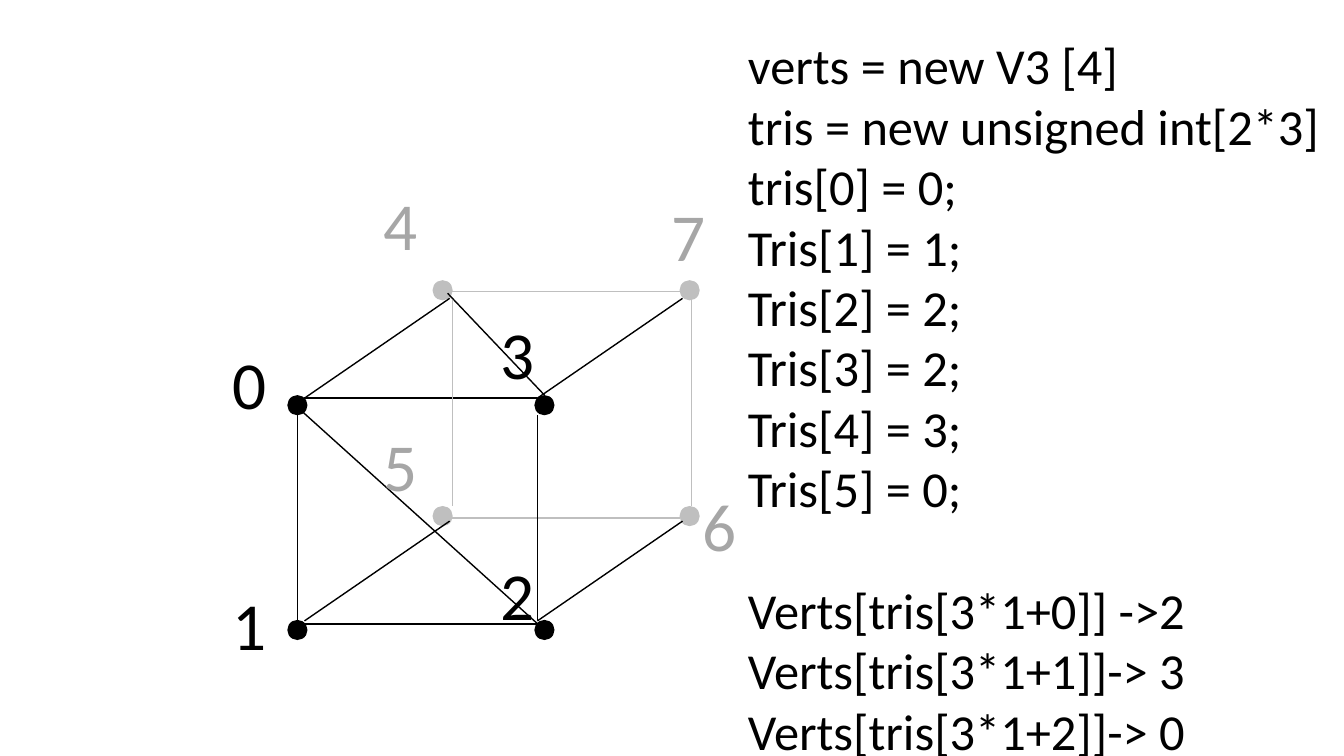
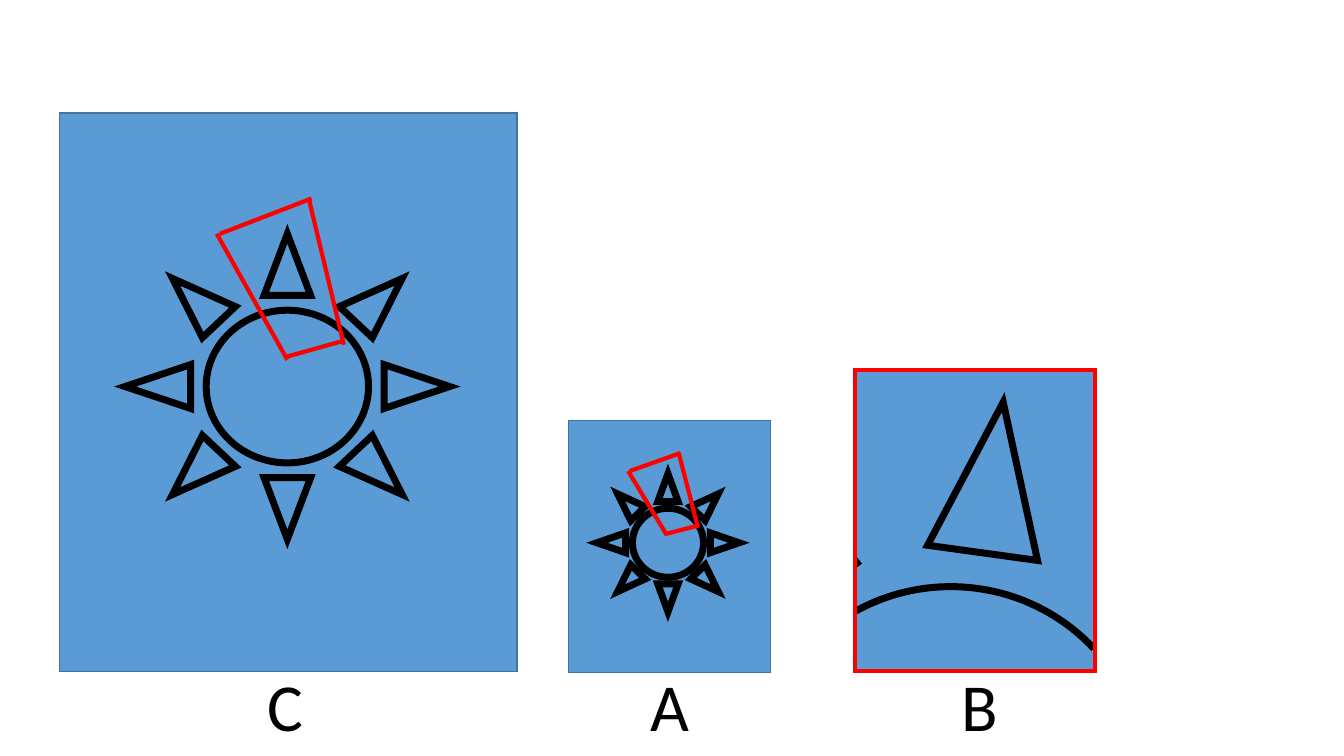
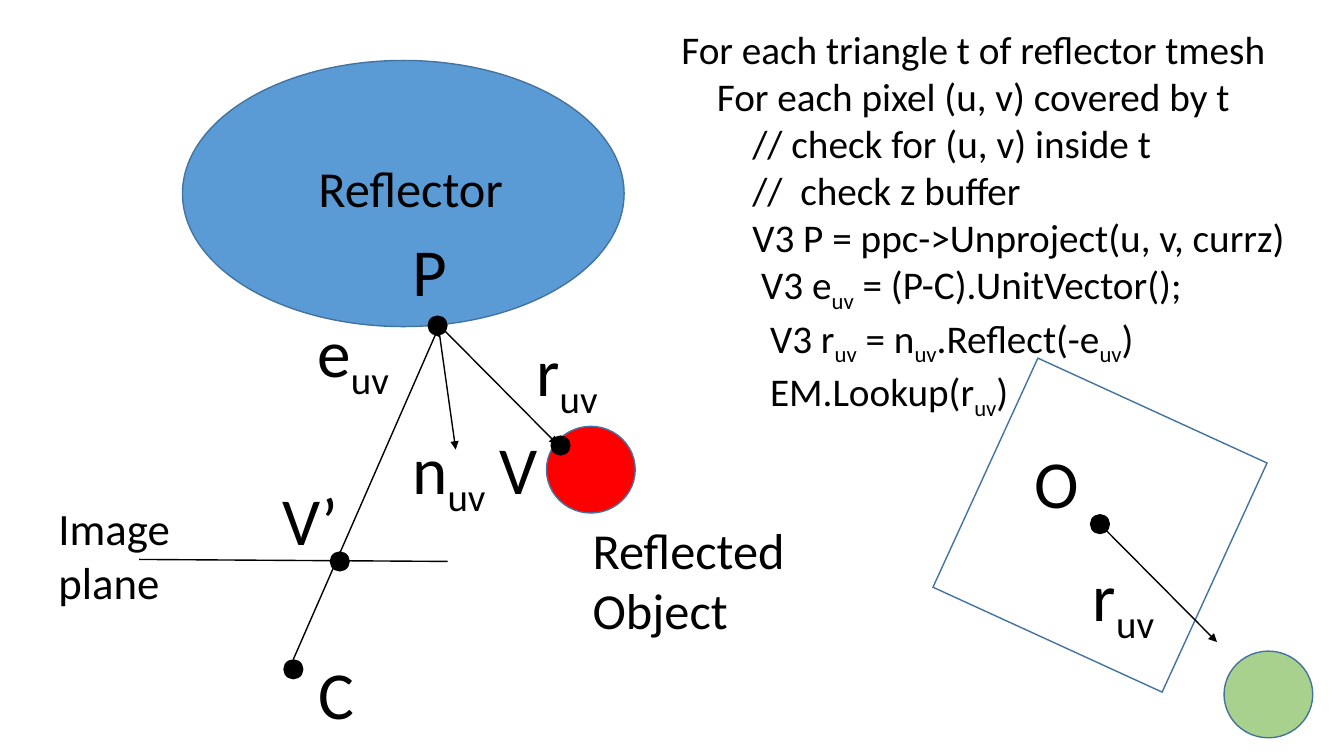
import math

from lxml import etree
from pptx import Presentation
from pptx.dml.color import RGBColor
from pptx.enum.shapes import MSO_CONNECTOR, MSO_SHAPE
from pptx.enum.text import MSO_AUTO_SIZE
from pptx.oxml.ns import qn
from pptx.util import Inches, Pt

RECT, OVAL, SUN = MSO_SHAPE.RECTANGLE, MSO_SHAPE.OVAL, MSO_SHAPE.SUN
STRAIGHT = MSO_CONNECTOR.STRAIGHT
GROW = MSO_AUTO_SIZE.SHAPE_TO_FIT_TEXT

BLACK = RGBColor(0x00, 0x00, 0x00)
BLUE = RGBColor(0x5B, 0x9B, 0xD5)
EDGE = RGBColor(0x43, 0x73, 0x9E)
RED = RGBColor(0xFF, 0x00, 0x00)
GREEN = RGBColor(0xA9, 0xD1, 0x8E)
GREY = RGBColor(0xBF, 0xBF, 0xBF)
LABEL_GREY = RGBColor(0xA6, 0xA6, 0xA6)

FONT = "Calibri"
SUBSCRIPT = "uv"
LABEL_SIZE = 48
DOT = 0.2
THIN, MARK, BOLD = 1, 3, 5
SPACE = 0.088  # width of one code indent step

# Slide 1: cube with numbered vertices
DOTS = [
    ((2.85, 5.3), (3.92, 6.15), BLACK),
    ((4.29, 6.74), (2.78, 5.02), GREY),
]
CUBE_EDGES = [
    ((5.33, 3.95), (3.02, 3.95), BLACK),
    ((5.33, 6.19), (3.02, 6.19), BLACK),
    ((6.74, 2.89), (4.43, 2.89), GREY),
    ((6.74, 5.14), (4.43, 5.14), GREY),
    ((2.95, 6.15), (2.95, 4.12), BLACK),
    ((5.33, 6.15), (5.33, 4.12), BLACK),
    ((6.86, 5.02), (6.86, 2.98), GREY),
    ((4.49, 5.02), (4.49, 2.98), GREY),
    ((5.4, 6.25), (2.95, 4.04), BLACK),
    ((5.4, 3.92), (4.44, 2.91), BLACK),
]
DEPTH_STARTS = [(x, y) for x in (4.46, 6.77) for y in (2.96, 5.17)]
DEPTH = (-1.44, 0.99)
CUBE_LABELS = [
    ("0", 2.21, 3.35, BLACK), ("1", 2.21, 5.74, BLACK),
    ("2", 4.87, 5.44, BLACK), ("3", 4.87, 3.05, BLACK),
    ("4", 3.71, 1.77, LABEL_GREY), ("5", 3.71, 4.16, LABEL_GREY),
    ("6", 6.87, 4.76, LABEL_GREY), ("7", 6.56, 1.88, LABEL_GREY),
]
MESH_CODE = [
    "verts = new V3 [4]",
    "tris = new unsigned int[2*3]",
    "tris[0] = 0;",
    "Tris[1] = 1;",
    "Tris[2] = 2;",
    "Tris[3] = 2;",
    "Tris[4] = 3;",
    "Tris[5] = 0;",
    "Verts[tris[3*1+0]] ->2",
    "Verts[tris[3*1+1]]-> 3",
    "Verts[tris[3*1+2]]-> 0",
]
LOOKUP_START = 8

# Slide 2: image C, its small version A and the warped detail B
SUN_PANELS = [
    ((0.59, 1.12, 4.54, 5.54), (1.24, 2.32, 3.22, 3.03)),
    ((5.64, 4.17, 2, 2.5), (5.92, 4.7, 1.41, 1.37)),
]
QUAD_SIDES = [
    ((2.85, 3.57), (2.15, 2.32)),
    ((3.41, 3.42), (3.06, 1.96)),
    ((2.18, 2.32), (3.09, 1.97)),
    ((2.84, 3.54), (3.41, 3.38)),
]
QUAD_CORNER = (2.15, 1.96)
QUAD_PLACES = [(2.15, 1.96, 1, 1), (6.23, 4.49, 0.55, 0.51)]
DETAIL = (8.48, 3.67, 2.38, 2.99)
DETAIL_RAY = [(9.95, 3.99), (9.2, 5.41), (10.29, 5.56)]
DETAIL_TIP = [(8.5, 5.54), (8.54, 5.59), (8.5, 5.62)]
DISC_CENTRE, DISC_RADII = (9.43, 7.7), (1.92, 1.88)
ARC_STEPS = 40
PANEL_LABELS = [("C", 2.56, 0.56), ("A", 6.35, 0.59), ("B", 9.44, 0.57)]

# Slide 3: reflection lookup
SCENE = [
    (RECT, (9.66, 3.96, 2.5, 2.5), None, 24.6),
    (OVAL, (1.81, 0.6, 4.38, 2.64), BLUE, 0),
    (OVAL, (5.42, 4.23, 0.88, 0.86), RED, 0),
    (OVAL, (12.14, 6.46, 0.88, 0.86), GREEN, 0),
]
IMAGE_PLANE = ((1.38, 5.55), (4.44, 5.57))
RAYS = [
    ((2.91, 6.54), (4.35, 3.25)),
    ((4.35, 3.25), (4.52, 4.46)),
    ((4.37, 3.24), (5.53, 4.41)),
    ((10.91, 5.2), (12.07, 6.37)),
]
POINTS = [(2.81, 6.54), (10.81, 5.1), (5.46, 4.32), (3.27, 5.47), (4.24, 3.13)]
SCENE_LABELS = [
    (["C"], (3.06, 6.42, 0.56, 0.91), LABEL_SIZE),
    (["O"], (10.16, 4.33, 0.65, 0.91), LABEL_SIZE),
    (["V"], (4.86, 4.19, 0.58, 0.91), LABEL_SIZE),
    (["V’"], (2.7, 4.7, 0.77, 0.91), LABEL_SIZE),
    (["P"], (3.99, 2.23, 0.55, 0.91), LABEL_SIZE),
    (["euv"], (3.05, 3.03, 0.98, 0.91), LABEL_SIZE),
    (["ruv"], (5.22, 3.22, 0.88, 0.91), LABEL_SIZE),
    (["nuv"], (3.99, 4.19, 1, 0.91), LABEL_SIZE),
    (["ruv"], (10.74, 5.45, 0.88, 0.91), LABEL_SIZE),
    (["Image", "plane"], (0.48, 4.92, 1.32, 1.18), 32),
    (["Reflector"], (3.06, 1.51, 2.05, 0.71), 36),
    (["Reflected", "Object"], (5.78, 5.1, 2.13, 1.31), 36),
]
LOOKUP_CODE = [
    (0, "For each triangle t of reflector tmesh"),
    (4, "For each pixel (u, v) covered by t"),
    (8, "// check for (u, v) inside t"),
    (8, "//  check z buffer"),
    (8, "V3 P = ppc->Unproject(u, v, currz)"),
    (9, "V3 euv = (P-C).UnitVector();"),
    (10, "V3 ruv = nuv.Reflect(-euv)"),
    (10, "EM.Lookup(ruv)"),
]


# Shared drawing helpers
def style(shape, fill, line, width):
    shape.shadow.inherit = False
    if fill is None:
        shape.fill.background()
    else:
        shape.fill.solid()
        shape.fill.fore_color.rgb = fill
    if line is None:
        shape.line.fill.background()
    else:
        shape.line.color.rgb = line
        shape.line.width = Pt(width)
        etree.SubElement(shape.line._get_or_add_ln(), qn("a:miter"), lim="800000")
    return shape


def add_shape(page, kind, frame, fill=None, line=None, width=THIN):
    shape = page.shapes.add_shape(kind, *map(Inches, frame))
    return style(shape, fill, line, width)


def add_dot(page, x, y, colour=BLACK):
    add_shape(page, OVAL, (x, y, DOT, DOT), colour)


def add_outline(page, points, fill, width, close=True):
    corners = [(Inches(x), Inches(y)) for x, y in points]
    builder = page.shapes.build_freeform(*corners[0], scale=1.0)
    builder.add_line_segments(corners[1:], close=close)
    style(builder.convert_to_shape(), fill, BLACK, width)


def add_line(page, start, end, colour=BLACK, width=THIN, arrow=False):
    line = page.shapes.add_connector(STRAIGHT, *map(Inches, (*start, *end)))
    line.line.color.rgb = colour
    line.line.width = Pt(width)
    if arrow:
        etree.SubElement(line.line._get_or_add_ln(), qn("a:tailEnd"), type="triangle")
    etree.SubElement(line._element.spPr, qn("a:effectLst"))


def add_span(para, text, size, colour):
    span = para.add_run()
    span.text = text
    for name, value in {"name": FONT, "size": Pt(size)}.items():
        setattr(span.font, name, value)
    span.font.color.rgb = colour
    if text == SUBSCRIPT:
        span.font._element.set("baseline", "-25000")


def add_text(page, lines, frame, size=LABEL_SIZE, colour=BLACK):
    box = page.shapes.add_textbox(*map(Inches, frame)).text_frame
    box.word_wrap = False
    box.auto_size = GROW
    for number, line in enumerate(lines):
        para = box.add_paragraph() if number else box.paragraphs[0]
        for index, part in enumerate(line.split(SUBSCRIPT)):
            if index:
                add_span(para, SUBSCRIPT, size, colour)
            if part:
                add_span(para, part, size, colour)
    return box


def draw_cube(page):
    for columns, rows, colour in DOTS:
        for x in columns:
            for y in rows:
                add_dot(page, x, y, colour)
    for start, end, colour in CUBE_EDGES:
        add_line(page, start, end, colour)
    for x, y in DEPTH_STARTS:
        add_line(page, (x, y), (x + DEPTH[0], y + DEPTH[1]))
    for text, x, y, colour in CUBE_LABELS:
        add_text(page, [text], (x, y, 0.56, 0.91), colour=colour)
    code = add_text(page, MESH_CODE, (7.32, 0.29, 5.92, 7.37), 36)
    code.paragraphs[LOOKUP_START].space_before = Pt(43.5)


def draw_detail(page):
    left, _, width, _ = DETAIL
    add_shape(page, RECT, DETAIL, BLUE)
    add_outline(page, DETAIL_RAY, BLUE, BOLD)
    add_outline(page, DETAIL_TIP, BLACK, THIN)
    # Part of the disc between the two sides of the frame
    (cx, cy), (rx, ry) = DISC_CENTRE, DISC_RADII
    first = math.acos((left + 0.01 - cx) / rx)
    last = math.acos((left + width - 0.01 - cx) / rx)
    angles = [first + (last - first) * step / ARC_STEPS for step in range(ARC_STEPS + 1)]
    arc = [(cx + rx * math.cos(a), cy - ry * math.sin(a)) for a in angles]
    add_outline(page, arc, None, BOLD, close=False)
    add_shape(page, RECT, DETAIL, None, RED, MARK)


def draw_suns(page):
    for panel, sun in SUN_PANELS:
        add_shape(page, RECT, panel, BLUE, EDGE)
        add_shape(page, SUN, sun, BLUE, BLACK, BOLD)
    for left, top, x_scale, y_scale in QUAD_PLACES:
        for side in QUAD_SIDES:
            start, end = [(left + (x - QUAD_CORNER[0]) * x_scale,
                           top + (y - QUAD_CORNER[1]) * y_scale) for x, y in side]
            add_line(page, start, end, RED, MARK)
    draw_detail(page)
    for text, x, width in PANEL_LABELS:
        add_text(page, [text], (x, 6.54, width, 0.91))


def draw_reflection(page):
    for kind, frame, fill, angle in SCENE:
        add_shape(page, kind, frame, fill, EDGE).rotation = angle
    add_line(page, *IMAGE_PLANE)
    for start, end in RAYS:
        add_line(page, start, end, arrow=True)
    for x, y in POINTS:
        add_dot(page, x, y)
    for lines, frame, size in SCENE_LABELS:
        add_text(page, lines, frame, size)
    code = add_text(page, [line for _, line in LOOKUP_CODE], (6.66, 0.2, 6.26, 3.87), 28)
    for para, (steps, _) in zip(code.paragraphs, LOOKUP_CODE):
        para._p.get_or_add_pPr().set("marL", str(Inches(steps * SPACE)))


def main():
    deck = Presentation()
    deck.slide_width, deck.slide_height = Inches(13.33), Inches(7.5)
    blank = deck.slide_layouts[6]
    for draw in (draw_cube, draw_suns, draw_reflection):
        draw(deck.slides.add_slide(blank))
    deck.save("out.pptx")


if __name__ == "__main__":
    main()
